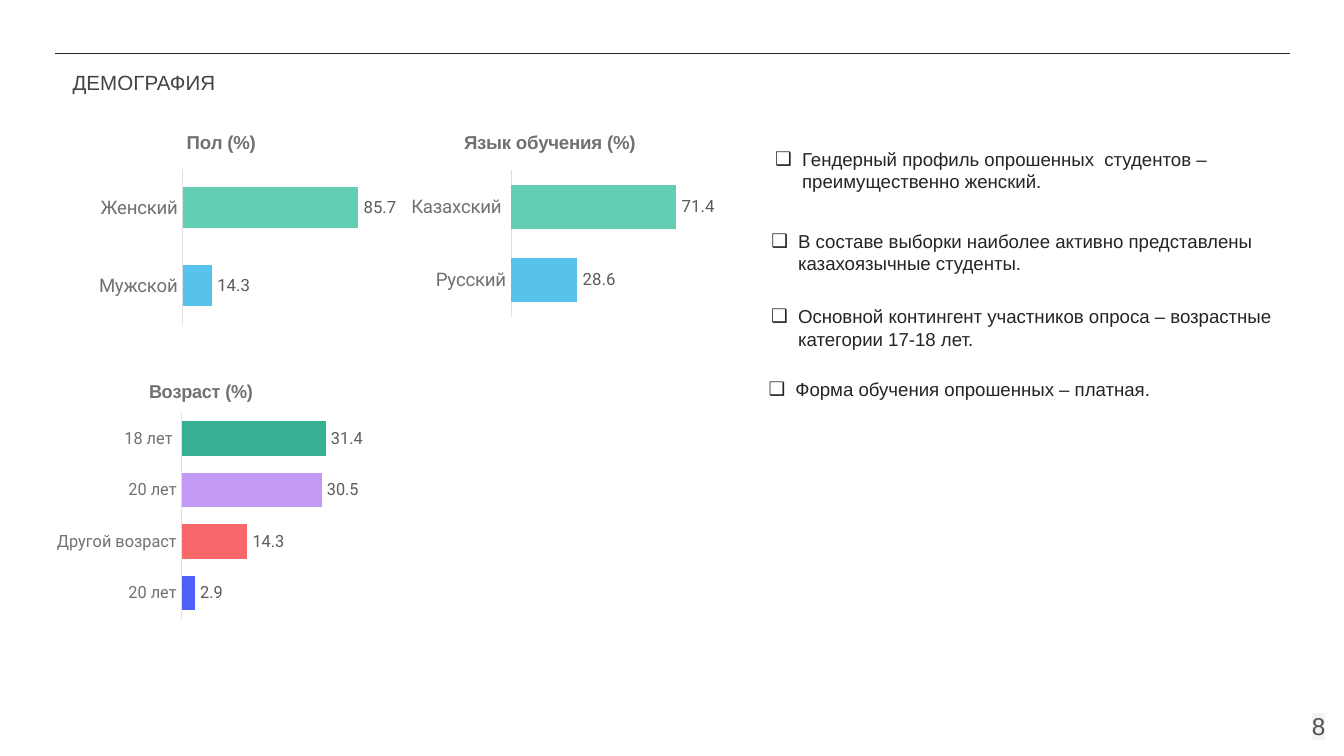
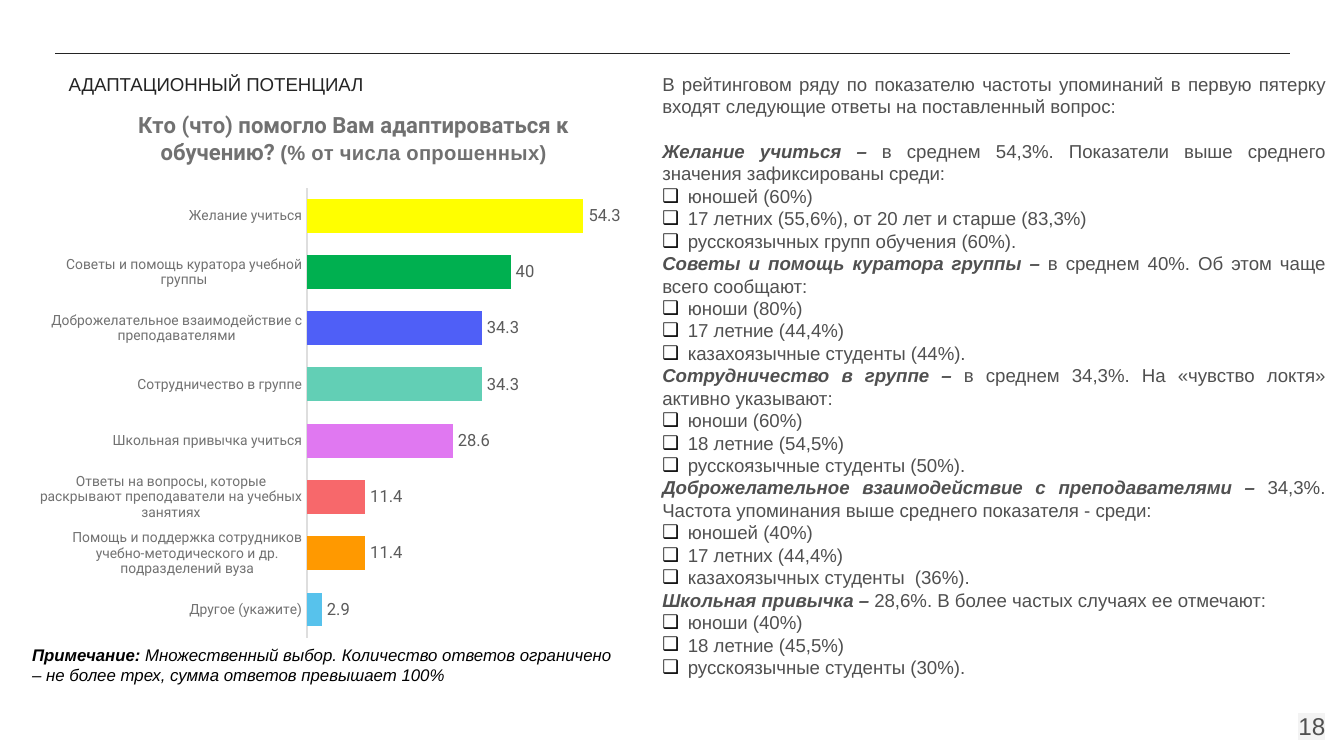
from dataclasses import dataclass

from lxml.etree import SubElement
from pptx import Presentation
from pptx.chart.data import CategoryChartData
from pptx.dml.color import RGBColor
from pptx.enum.chart import XL_CHART_TYPE, XL_LABEL_POSITION, XL_TICK_MARK
from pptx.enum.shapes import MSO_CONNECTOR
from pptx.enum.text import MSO_ANCHOR, MSO_AUTO_SIZE, PP_ALIGN
from pptx.oxml.ns import qn
from pptx.util import Inches, Pt


@dataclass(frozen=True)
class Theme:
    ink: str = "242424"
    head: str = "434343"
    body: str = "505050"
    black: str = "000000"
    axis: str = "717171"
    value: str = "5B5B5B"
    rule: str = "DEDEDE"
    glow: str = "F3F3F3"
    mint: str = "62CFB5"
    sky: str = "57C2EC"
    blue: str = "4F5FF7"
    coral: str = "F7686B"
    lilac: str = "C29AF4"
    jade: str = "36AF92"
    amber: str = "FF9900"
    pink: str = "E078F1"
    green: str = "00B050"
    yellow: str = "FFFF00"
    sans: str = "Arial"
    label: str = "Roboto"
    title: float = 11
    text: float = 10
    note: float = 9
    tick: float = 7.5
    page: float = 13
    ask: float = 12


theme = Theme()


def write(place, text, at=None, pad=0.1, align=PP_ALIGN.LEFT, bullet=None, indent=0.2, gap=0, **style):
    frame = place
    if at:
        frame = place.shapes.add_textbox(*map(Inches, at)).text_frame
    if not frame.text:
        frame.word_wrap = True
        frame.auto_size = MSO_AUTO_SIZE.NONE
        frame.vertical_anchor = MSO_ANCHOR.TOP
        frame.margin_left = frame.margin_right = Inches(0.1)
        frame.margin_top = frame.margin_bottom = Inches(pad)
    para = frame.add_paragraph() if frame.text else frame.paragraphs[0]
    para.alignment = align
    if gap:
        para.space_before = Pt(gap)
    if bullet:
        props = para._p.get_or_add_pPr()
        props.set("marL", str(Inches(indent)))
        props.set("indent", str(-Inches(indent)))
        tint = SubElement(props, qn("a:buClr"))
        SubElement(tint, qn("a:srgbClr"), val=bullet)
        SubElement(props, qn("a:buFont"), typeface=theme.sans)
        SubElement(props, qn("a:buChar"), char="❑")
    parts = [(text, {})] if isinstance(text, str) else text
    for words, extra in parts:
        look = {"size": theme.text, "color": theme.ink, "face": theme.sans} | style | extra
        run = para.add_run()
        run.text = words
        font = run.font
        font.size = Pt(look["size"])
        font.bold = look.get("bold", False)
        font.italic = look.get("italic", False)
        font.color.rgb = RGBColor.from_string(look["color"])
        font.name = look["face"]
        if "glow" in look:
            mark = SubElement(run._r.rPr, qn("a:highlight"))
            SubElement(mark, qn("a:srgbClr"), val=look["glow"])
            run._r.rPr.find(qn("a:solidFill")).addnext(mark)
    return frame


def draw(slide, at, title, rows, plot, gap, top, tick, size=theme.text, spot=None):
    data = CategoryChartData()
    data.categories = [row[0] for row in rows]
    data.add_series("Series 1", [row[1] for row in rows])
    chart = slide.shapes.add_chart(XL_CHART_TYPE.BAR_CLUSTERED, *map(Inches, at), data).chart
    chart.has_legend = False
    chart.font.size = Pt(theme.text)
    chart.font.name = theme.sans
    chart.font.color.rgb = RGBColor.from_string(theme.ink)
    chart.has_title = True
    write(chart.chart_title.text_frame, title, align=PP_ALIGN.CENTER, size=size, color=theme.axis, bold=True)
    chart.chart_title.include_in_layout = False

    cats = chart.category_axis
    cats.major_tick_mark = cats.minor_tick_mark = XL_TICK_MARK.NONE
    cats.has_major_gridlines = False
    cats.format.line.width = Pt(0.75)
    cats.format.line.color.rgb = RGBColor.from_string(theme.rule)
    cats.tick_labels.font.size = Pt(tick)
    cats.tick_labels.font.name = theme.label
    cats.tick_labels.font.color.rgb = RGBColor.from_string(theme.axis)
    vals = chart.value_axis
    vals.visible = vals.has_major_gridlines = False
    vals.minimum_scale, vals.maximum_scale = 0, top

    bars = chart.plots[0]
    bars.gap_width = gap
    bars.vary_by_categories = False
    series = bars.series[0]
    series.format.fill.solid()
    series.format.fill.fore_color.rgb = RGBColor.from_string(theme.mint)
    tags = series.data_labels
    tags.show_value = True
    tags.position = XL_LABEL_POSITION.OUTSIDE_END
    tags.font.size = Pt(theme.note)
    tags.font.name = theme.label
    tags.font.color.rgb = RGBColor.from_string(theme.value)
    for place, row in enumerate(rows):
        fill = series.points[place].format.fill
        fill.solid()
        fill.fore_color.rgb = RGBColor.from_string(row[2])

    area = chart._chartSpace.chart.plotArea
    frames = [(area, 0, ("layoutTarget", "xMode", "yMode", "x", "y", "w", "h"),
               ("inner", "edge", "edge", *plot))]
    if spot:
        frames.append((chart.chart_title._element, 1, ("xMode", "yMode", "x", "y"),
                       ("edge", "edge", *spot)))
    for owner, place, keys, sizes in frames:
        for old in owner.findall(qn("c:layout")):
            owner.remove(old)
        layout = SubElement(owner, qn("c:layout"))
        owner.insert(place, layout)
        inner = SubElement(layout, qn("c:manualLayout"))
        for key, val in zip(keys, sizes):
            SubElement(inner, qn(f"c:{key}"), val=str(val))


deck = Presentation()
deck.slide_width = Inches(10)
deck.slide_height = deck.slide_width * 9 // 16

heads = [
    ("ДЕМОГРАФИЯ", (0.44, 0.42, 4.42, 1.63), theme.title, theme.head, "8"),
    ("АДАПТАЦИОННЫЙ ПОТЕНЦИАЛ", (0.41, 0.44, 3.39, 0.27), theme.text, theme.ink, "18"),
]
for name, at, size, color, page in heads:
    slide = deck.slides.add_slide(deck.slide_layouts[5])
    rule = slide.shapes.add_connector(
        MSO_CONNECTOR.STRAIGHT, Inches(0.41), Inches(0.4), Inches(9.6), Inches(0.4))
    rule.line.width = Pt(0.75)
    rule.line.color.rgb = RGBColor.from_string(theme.ink)
    SubElement(rule._element.spPr, qn("a:effectLst"))
    title = slide.shapes.title
    title.left, title.top, title.width, title.height = map(Inches, at)
    write(title.text_frame, name, size=size, color=color)
    write(slide, page, at=(9.36, 5.19, 0.6, 0.43), align=PP_ALIGN.RIGHT,
          size=theme.page, color=theme.body, glow=theme.glow)

people, adapt = deck.slides

draw(people, (0.35, 0.86, 2.6, 1.73), "Пол (%)",
     [("Мужской", 14.3, theme.sky), ("Женский", 85.7, theme.mint)],
     (0.39, 0.23, 0.53, 0.67), 90, 90, theme.text)
draw(people, (2.79, 0.86, 2.6, 1.63), "Язык обучения (%)",
     [("Русский", 28.6, theme.sky), ("Казахский ", 71.4, theme.mint)],
     (0.39, 0.25, 0.53, 0.67), 66, 80, theme.text)
draw(people, (0.18, 2.71, 2.52, 2.13), "Возраст (%)",
     [("20 лет", 2.9, theme.blue), ("Другой возраст", 14.3, theme.coral),
      ("20 лет", 30.5, theme.lilac), ("18 лет ", 31.4, theme.jade)],
     (0.48, 0.17, 0.51, 0.72), 48, 36.5, theme.note, spot=(0.37, 0.04))

facts = [
    ("Гендерный профиль опрошенных  студентов – преимущественно женский.", (5.67, 1, 4.23, 3.84)),
    ("В составе выборки наиболее активно представлены казахоязычные студенты.", (5.64, 1.61, 4.15, 2.87)),
    ("Основной контингент участников опроса – возрастные категории 17-18 лет.", (5.64, 2.17, 4.23, 2.13)),
    ("Форма обучения опрошенных – платная.", (5.62, 2.71, 4.15, 1.92)),
]
for fact, at in facts:
    write(people, fact, at=at, bullet=theme.ink)

strong = {"bold": True, "italic": True}
side = {"align": PP_ALIGN.JUSTIFY, "color": theme.body}
story = write(
    adapt, "В рейтинговом ряду по показателю частоты упоминаний в первую пятерку "
    "входят следующие ответы на поставленный вопрос:", at=(4.83, 0.44, 5.13, 4.84), **side)
topics = [
    ("Желание учиться – ", "в среднем 54,3%. Показатели выше среднего значения зафиксированы среди:",
     ("юношей (60%)", "17 летних (55,6%), от 20 лет и старше (83,3%)", "русскоязычных групп обучения (60%).")),
    ("Советы и помощь куратора группы –", " в среднем 40%. Об этом чаще всего сообщают:",
     ("юноши (80%)", "17 летние (44,4%)", "казахоязычные студенты (44%).")),
    ("Сотрудничество в группе – ", "в среднем 34,3%. На «чувство локтя» активно указывают:",
     ("юноши (60%)", "18 летние (54,5%)", "русскоязычные студенты (50%).")),
    ("Доброжелательное взаимодействие с преподавателями – ",
     "34,3%. Частота упоминания выше среднего показателя - среди:",
     ("юношей (40%)", "17 летних (44,4%)", "казахоязычных студенты  (36%).")),
    ("Школьная привычка – ", "28,6%. В более частых случаях ее отмечают:",
     ("юноши (40%)", "18 летние (45,5%)", "русскоязычные студенты (30%).")),
]
for turn, (lead, rest, groups) in enumerate(topics):
    write(story, [(lead, strong), (rest, {})], gap=0 if turn else 12, **side)
    for group in groups:
        write(story, group, bullet=theme.black, indent=0.19, **side)

draw(adapt, (0.27, 0.71, 4.35, 4.04),
     [("Кто (что) помогло Вам адаптироваться к обучению? ", {"face": theme.label}),
      ("(% от числа опрошенных)", {"size": theme.title})],
     [("Другое (укажите)", 2.9, theme.sky),
      ("Помощь и поддержка сотрудников учебно-методического и др. подразделений вуза", 11.4, theme.amber),
      ("Ответы на вопросы, которые раскрывают преподаватели на учебных занятиях", 11.4, theme.coral),
      ("Школьная привычка учиться", 28.6, theme.pink),
      ("Сотрудничество в группе", 34.3, theme.mint),
      ("Доброжелательное взаимодействие с преподавателями", 34.3, theme.blue),
      ("Советы и помощь куратора учебной группы", 40, theme.green),
      ("Желание учиться", 54.3, theme.yellow)],
     (0.47, 0.17, 0.53, 0.83), 66, 60, theme.tick, theme.ask, (0.17, 0.02))
write(adapt, [("Примечание:", {"bold": True}),
              (" Множественный выбор. Количество ответов ограничено – не более трех, "
               "сумма ответов превышает 100%", {})],
      at=(0.14, 4.75, 4.58, 0.4), pad=0.05, size=theme.note, color=theme.black, italic=True)

deck.save("out.pptx")
